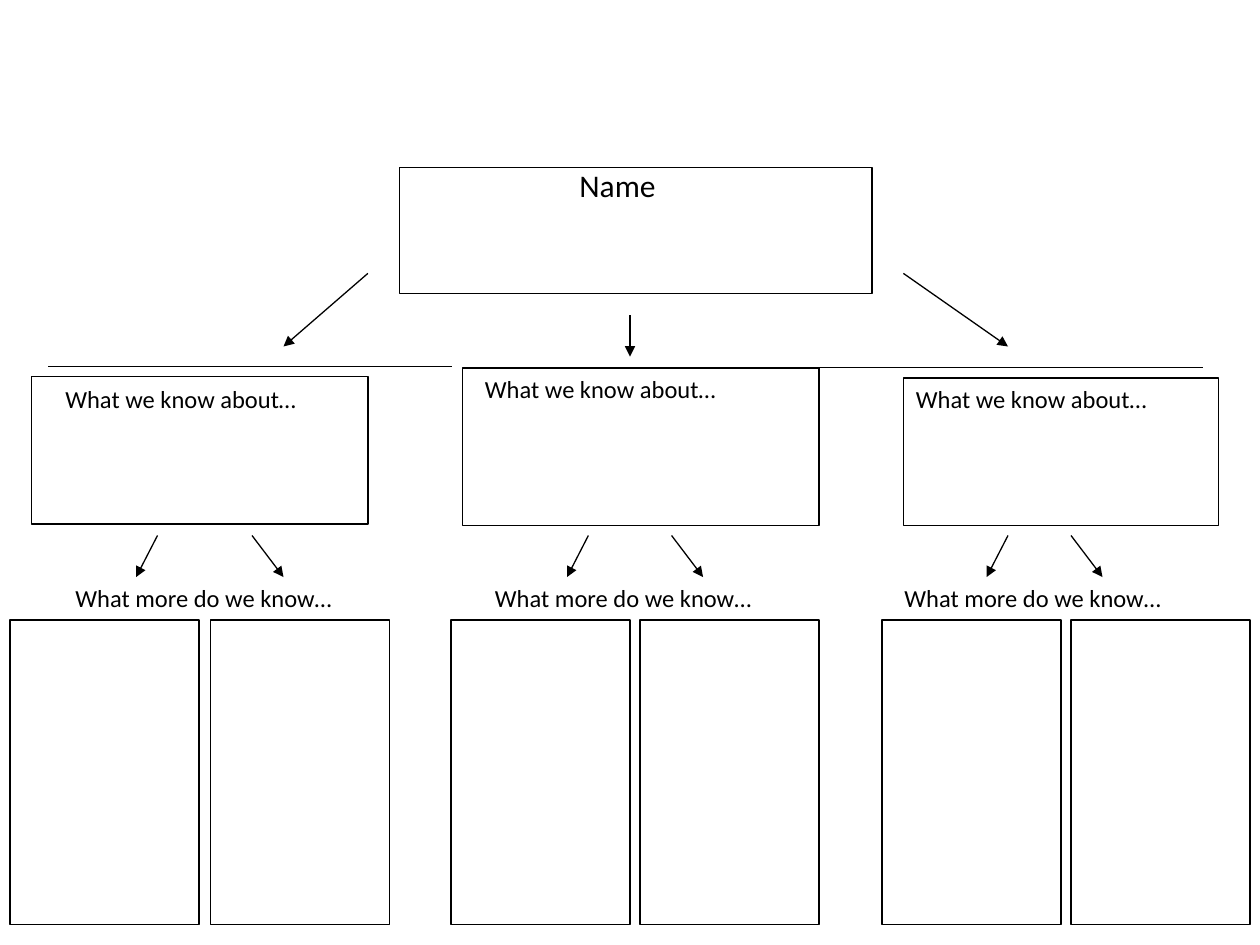
import pptx
import pptx.dml.color
import pptx.enum.shapes
import pptx.oxml
import pptx.oxml.ns
import pptx.util
from pptx.util import Inches

SHAPE = pptx.enum.shapes.MSO_SHAPE
BLACK = "000000"


def color(value):
    return pptx.dml.color.RGBColor.from_string(value)


def add_xml(parent, tag, attributes=""):
    parent.append(pptx.oxml.parse_xml(
        f"<a:{tag} {pptx.oxml.ns.nsdecls('a')} {attributes}/>"))


prs = pptx.Presentation()
prs.slide_width = Inches(10)
prs.slide_height = Inches(7.5)
s = prs.slides.add_slide(prs.slide_layouts[6])

# Outlined boxes: kind, left, top, width, height, callout adjustments
boxes = [
    (SHAPE.LINE_CALLOUT_1, 7.17, 3, 2.5, 1.17, (-0.07, 0.95, -0.07, -0.27)),
    (SHAPE.LINE_CALLOUT_1, 0.25, 2.99, 2.67, 1.17, (-0.07, 0.05, -0.07, 1.25)),
    (SHAPE.RECTANGLE, 3.67, 2.92, 2.83, 1.25, ()),
    (SHAPE.RECTANGLE, 3.17, 1.33, 3.75, 1, ()),
]
detail_columns = [(0.08, 1.5), (1.67, 1.42), (3.58, 1.42),
                  (5.08, 1.42), (7, 1.42), (8.5, 1.42)]
for left, width in detail_columns:
    boxes.append((SHAPE.RECTANGLE, left, 4.92, width, 2.42, ()))

for kind, left, top, width, height, adjustments in boxes:
    sp = s.shapes.add_shape(kind, Inches(left), Inches(top),
                            Inches(width), Inches(height))
    for i, value in enumerate(adjustments):
        sp.adjustments[i] = value
    sp.shadow.inherit = False
    sp.fill.background()
    sp.line.color.rgb = color(BLACK)
    sp.line.width = pptx.util.Pt(0.75)

# Arrows: three from the name, then a pair under each topic
arrows = [(2.92, 2.17, 2.25, 2.75), (7.17, 2.17, 8, 2.75), (5, 2.5, 5, 2.83)]
for left_start, right_start in [(1.25, 2), (4.67, 5.33), (8, 8.5)]:
    arrows.append((left_start, 4.25, left_start - 0.17, 4.58))
    arrows.append((right_start, 4.25, right_start + 0.25, 4.58))

for points in arrows:
    arrow = s.shapes.add_connector(pptx.enum.shapes.MSO_CONNECTOR.STRAIGHT,
                                   *[Inches(v) for v in points])
    arrow.line.color.rgb = color(BLACK)
    arrow.line.width = pptx.util.Pt(0.75)
    add_xml(arrow.line._get_or_add_ln(), "tailEnd", 'type="triangle"')
    add_xml(arrow._element.spPr, "effectLst")

# Labels: text, left, top, width, height, font size
know = "What we know about…"
more = "What more do we know…"
labels = [
    ("Name", 4.5, 1.27, 1.75, 0.4, 18),
    (know, 0.42, 3, 2.5, 0.33, 14),
    (know, 3.75, 2.92, 2.25, 0.33, 14),
    (know, 7.17, 3, 2.25, 0.33, 14),
]
for left in (0.5, 3.83, 7.08):
    labels.append((more, left, 4.58, 2.5, 0.33, 14))

for text, left, top, width, height, size in labels:
    tf = s.shapes.add_textbox(Inches(left), Inches(top),
                              Inches(width), Inches(height)).text_frame
    tf.word_wrap = True
    p = tf.paragraphs[0]
    p.text = text
    p.font.name = "Calibri"
    p.font.size = pptx.util.Pt(size)
    p.font.color.rgb = color(BLACK)

prs.save("out.pptx")
